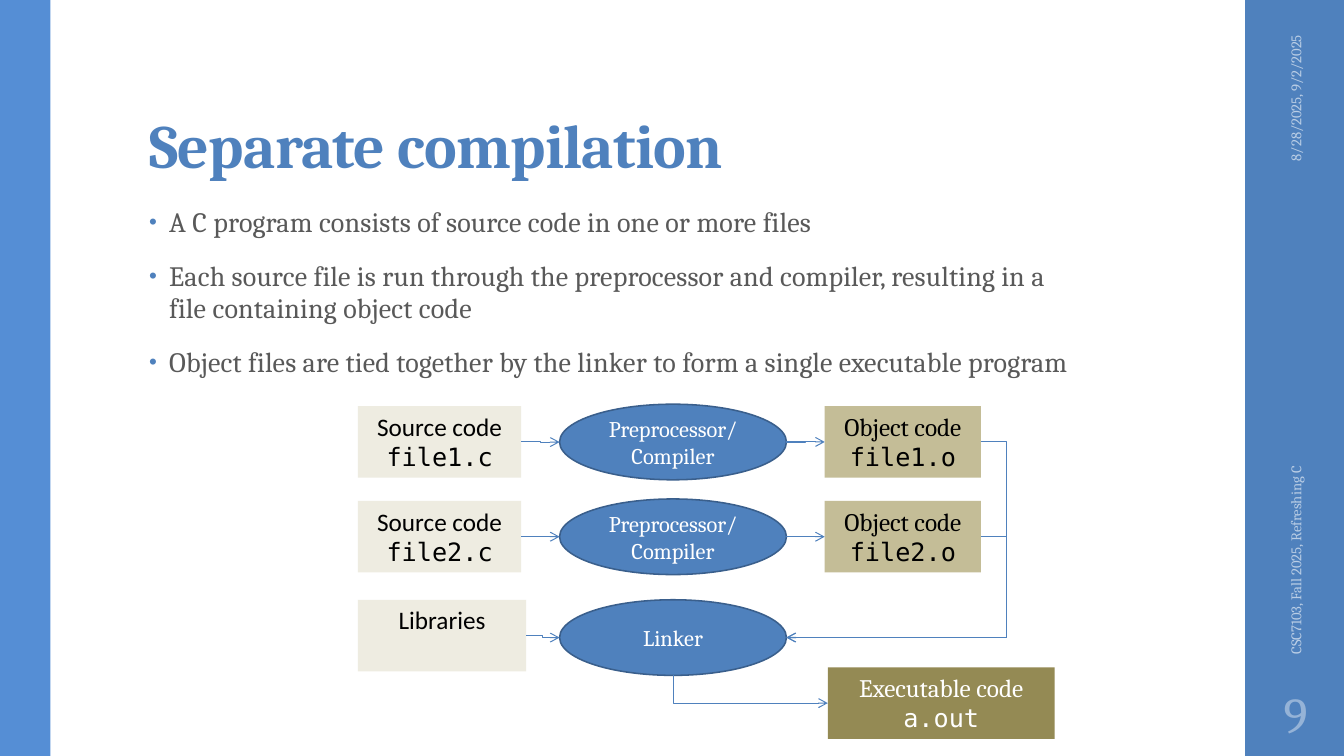
from lxml.etree import SubElement
from pptx import Presentation
from pptx.dml.color import RGBColor
from pptx.enum.shapes import MSO_CONNECTOR, MSO_SHAPE
from pptx.enum.text import MSO_ANCHOR, PP_ALIGN
from pptx.oxml.ns import qn
from pptx.util import Inches, Pt

COLORS = {
    "blue": "4F81BD", "left_bar": "558ED5", "outline": "3A5F8C",
    "body": "595959", "black": "000000", "white": "FFFFFF",
    "source": "EEECE1", "object": "C4BD97", "program": "948A54",
    "footer": "B9CDE5", "number": "95B3D7",
}
SERIF, SANS, MONO = "Cambria", "Calibri", "DejaVu Sans Mono"
BULLETS = [
    "A C program consists of source code in one or more files",
    "Each source file is run through the preprocessor and compiler, "
    "resulting in a file containing object code",
    "Object files are tied together by the linker to form a single executable program",
]


def rgb(name):
    return RGBColor.from_string(COLORS[name])


def add_run(p, text, size, color, font=SERIF, bold=False, spacing=0):
    r = p.add_run()
    r.text = text
    r.font.size, r.font.name, r.font.bold = Pt(size), font, bold
    r.font.color.rgb = rgb(color)
    if spacing:
        r.font._element.set("spc", str(spacing))


def add_text(slide, box, anchor=MSO_ANCHOR.TOP, rotation=0):
    sp = slide.shapes.add_textbox(*map(Inches, box))
    sp.rotation = rotation
    tf = sp.text_frame
    tf.word_wrap = True
    tf.vertical_anchor = anchor
    return tf


def add_block(slide, kind, box, fill, outline=None):
    sp = slide.shapes.add_shape(kind, *map(Inches, box))
    sp.shadow.inherit = False
    sp.fill.solid()
    sp.fill.fore_color.rgb = rgb(fill)
    if outline:
        sp.line.color.rgb = rgb(outline)
        sp.line.width = Pt(1.1)
    else:
        sp.line.fill.background()
    return sp


def add_lines(sp, lines, size, color, anchor=MSO_ANCHOR.TOP):
    """Write centred (text, font) lines into a shape."""
    tf = sp.text_frame
    tf.word_wrap = True
    tf.vertical_anchor = anchor
    for i, (text, font) in enumerate(lines):
        p = tf.add_paragraph() if i else tf.paragraphs[0]
        p.alignment = PP_ALIGN.CENTER
        add_run(p, text, size, color, font)


def add_code(slide, box, fill, lines, color="black"):
    sp = add_block(slide, MSO_SHAPE.RECTANGLE, box, fill)
    add_lines(sp, lines, 18, color)
    return sp


def add_step(slide, box, *lines):
    sp = add_block(slide, MSO_SHAPE.OVAL, box, "blue", "outline")
    add_lines(sp, [(text, SERIF) for text in lines], 16, "white", MSO_ANCHOR.MIDDLE)
    return sp


def left_of(sp):
    return sp.left, sp.top + sp.height // 2


def right_of(sp):
    return sp.left + sp.width, sp.top + sp.height // 2


def bottom_of(sp):
    return sp.left + sp.width // 2, sp.top + sp.height


def add_arrow(slide, start, end, bend=0.5):
    """Elbow arrow whose middle leg lies at the share `bend` of its width."""
    cxn = slide.shapes.add_connector(MSO_CONNECTOR.ELBOW, *start, *end)
    cxn.line.color.rgb = rgb("blue")
    cxn.line.width = Pt(0.75)
    SubElement(cxn.line._get_or_add_ln(), qn("a:tailEnd"), type="arrow")
    spPr = cxn._element.spPr
    SubElement(spPr, qn("a:effectLst"))
    guides = spPr.find(qn("a:prstGeom")).get_or_add_avLst()
    SubElement(guides, qn("a:gd"), name="adj1", fmla=f"val {round(bend * 100000)}")
    return cxn


def add_down_right_arrow(slide, start, end):
    """Single-corner arrow: a turned and mirrored bentConnector2."""
    cxn = add_arrow(slide, start, end)
    dx, dy = end[0] - start[0], end[1] - start[1]
    cxn.left, cxn.top = start[0] + (dx - dy) // 2, start[1] + (dy - dx) // 2
    cxn.width, cxn.height = dy, dx
    spPr = cxn._element.spPr
    spPr.xfrm.set("rot", str(270 * 60000))
    spPr.xfrm.set("flipH", "1")
    geom = spPr.find(qn("a:prstGeom"))
    geom.set("prst", "bentConnector2")
    for guide in list(geom.avLst):
        geom.avLst.remove(guide)


def add_title(slide, box, text):
    tf = add_text(slide, box, MSO_ANCHOR.BOTTOM)
    tf.margin_top = Inches(0.03)
    p = tf.paragraphs[0]
    p.line_spacing = 0.9
    add_run(p, text, 44, "blue", bold=True, spacing=-50)


def add_bullets(slide, box, items):
    tf = add_text(slide, box)
    for i, text in enumerate(items):
        p = tf.add_paragraph() if i else tf.paragraphs[0]
        p.line_spacing, p.space_before, p.space_after = 0.95, Pt(14), Pt(2)
        pPr = p._p.get_or_add_pPr()
        pPr.set("marL", str(Inches(0.2)))
        pPr.set("indent", str(Inches(-0.2)))
        SubElement(SubElement(pPr, qn("a:buClr")), qn("a:srgbClr"), val=COLORS["blue"])
        SubElement(pPr, qn("a:buSzPct"), val="80000")
        SubElement(pPr, qn("a:buFont"), typeface="Arial")
        SubElement(pPr, qn("a:buChar"), char="•")
        add_run(p, text, 20, "body", spacing=10)


def add_diagram(slide, x, y):
    """Compilation flow with its top left corner at (x, y)."""
    step_x, object_x = x + 2, x + 4.63
    row_h, code_h, step_h = 0.94, 0.71, 0.75
    inset = (step_h - code_h) / 2
    objects = []
    for i in range(2):
        top = y + i * row_h
        name = f"file{i + 1}"
        source = add_code(slide, (x, top + inset, 1.62, code_h), "source",
                          [("Source code", SANS), (f"{name}.c", MONO)])
        compiler = add_step(slide, (step_x, top, 2.25, step_h), "Preprocessor/", "Compiler")
        obj = add_code(slide, (object_x, top + inset, 1.55, code_h), "object",
                       [("Object code", SERIF), (f"{name}.o", MONO)])
        add_arrow(slide, right_of(source), left_of(compiler))
        add_arrow(slide, right_of(compiler), left_of(obj))
        objects.append(obj)

    linker_y = y + 1.94
    linker = add_step(slide, (step_x, linker_y, 2.25, step_h), "Linker")
    libraries = add_code(slide, (x, linker_y, 1.67, code_h), "source", [("Libraries", SANS)])
    program = add_code(slide, (object_x + 0.03, y + 2.61, 2.25, code_h), "program",
                       [("Executable code", SERIF), ("a.out", MONO)], "white")
    add_arrow(slide, right_of(libraries), left_of(linker))
    for obj in objects:
        add_arrow(slide, right_of(obj), right_of(linker), bend=-0.13)
    add_down_right_arrow(slide, bottom_of(linker), left_of(program))


def add_side_bars(slide, date, footer, number):
    add_block(slide, MSO_SHAPE.RECTANGLE, (12.35, 0, 1, 7.5), "blue")
    add_block(slide, MSO_SHAPE.RECTANGLE, (0, 0, 0.5, 7.5), "left_bar")
    for text, box, align in ((date, (11.81, 1.09, 2.08, 0.4), PP_ALIGN.RIGHT),
                             (footer, (10.89, 4.43, 3.92, 0.4), PP_ALIGN.LEFT)):
        p = add_text(slide, box, MSO_ANCHOR.MIDDLE, 270).paragraphs[0]
        p.alignment = align
        add_run(p, text, 10.5, "footer")
    tf = add_text(slide, (12.35, 6.75, 1, 0.65), MSO_ANCHOR.MIDDLE)
    tf.margin_left = tf.margin_right = Inches(0.05)
    p = tf.paragraphs[0]
    p.alignment = PP_ALIGN.CENTER
    add_run(p, number, 36, "number")


def main():
    prs = Presentation()
    prs.slide_width, prs.slide_height = Inches(13.33), Inches(7.5)
    slide = prs.slides.add_slide(prs.slide_layouts[6])
    add_side_bars(slide, "8/28/2025, 9/2/2025", "CSC7103, Fall 2025, Refreshing C", "9")
    add_title(slide, (1.38, 0.32, 10.6, 1.53), "Separate compilation")
    add_bullets(slide, (1.38, 2, 9.4, 4.76), BULLETS)
    add_diagram(slide, 3.55, 4.01)
    prs.save("out.pptx")


if __name__ == "__main__":
    main()
